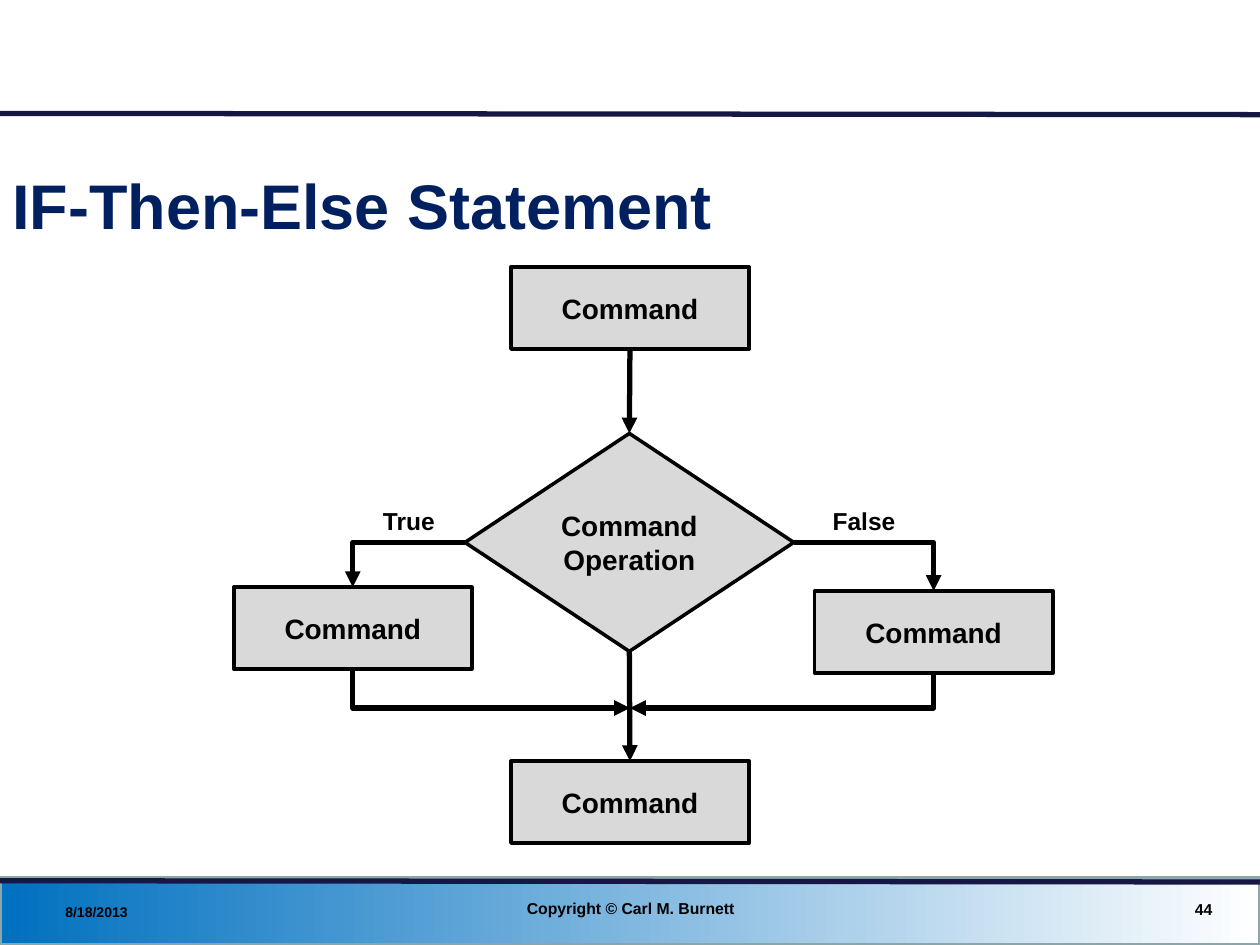
from lxml import etree
from pptx import Presentation
from pptx.dml.color import RGBColor
from pptx.enum.shapes import MSO_CONNECTOR, MSO_SHAPE
from pptx.enum.text import MSO_ANCHOR, PP_ALIGN
from pptx.oxml.ns import qn
from pptx.util import Inches, Pt

RECT = MSO_SHAPE.RECTANGLE
STEP = MSO_SHAPE.FLOWCHART_PROCESS
TEST = MSO_SHAPE.FLOWCHART_DECISION
STRAIGHT = MSO_CONNECTOR.STRAIGHT
ELBOW = MSO_CONNECTOR.ELBOW
LEFT, CENTER, RIGHT = PP_ALIGN.LEFT, PP_ALIGN.CENTER, PP_ALIGN.RIGHT
MIDDLE, TOP = MSO_ANCHOR.MIDDLE, MSO_ANCHOR.TOP

WIDE, HIGH = 10, 7.5
BOX_W, BOX_H = 1.89, 0.65
MID = WIDE / 2
JOIN = 5.62
NORTH, WEST, SOUTH, EAST = range(4)


def color(code):
    return RGBColor.from_string(code)


def place(*sizes):
    return [Inches(size) for size in sizes]


def write(shape, text, size, align, anchor=MIDDLE, code="000000", wrap=True):
    frame = shape.text_frame
    frame.word_wrap = wrap
    frame.vertical_anchor = anchor
    para = frame.paragraphs[0]
    para.text = text
    para.alignment = align
    font = para.font
    font.name, font.size, font.bold = "Arial", Pt(size), True
    font.color.rgb = color(code)


def label(slide, area, text, size, align=LEFT, **look):
    write(slide.shapes.add_textbox(*place(*area)), text, size, align, **look)


def block(slide, kind, area, text):
    shape = slide.shapes.add_shape(kind, *place(*area))
    shape.shadow.inherit = False
    shape.fill.solid()
    shape.fill.fore_color.rgb = color("D9D9D9")
    shape.line.color.rgb = color("000000")
    shape.line.width = Pt(2)
    write(shape, text, 16, CENTER)
    return shape


def step(slide, mid, top):
    return block(slide, STEP, (mid - BOX_W / 2, top, BOX_W, BOX_H), "Command")


def line(slide, kind, ends, code="000000"):
    link = slide.shapes.add_connector(kind, *place(*ends))
    link.line.color.rgb = color(code)
    link.line.width = Pt(3)
    props = link._element.spPr
    etree.SubElement(props, qn("a:effectLst"))
    if kind == ELBOW:
        props.find(qn("a:prstGeom")).set("prst", "bentConnector2")
    return link


def arrow(link, end):
    etree.SubElement(link.line._get_or_add_ln(), qn(f"a:{end}End"), type="triangle")


def flow(slide, kind, start, out, stop, into):
    link = line(slide, kind, (0, 0, 1, 1))
    link.begin_connect(start, out)
    link.end_connect(stop, into)
    arrow(link, "tail")


def merge(slide, box):
    link = line(slide, ELBOW, (MID, JOIN, 1, 1))
    link.end_connect(box, SOUTH)
    arrow(link, "head")


def frame(slide):
    band = slide.shapes.add_shape(RECT, *place(0, 6.97, WIDE, 0.53))
    band.shadow.inherit = False
    band.fill.gradient()
    band.fill.gradient_angle = 0
    for stop, code in zip(band.fill.gradient_stops, ("0070C0", "FFFFFF")):
        stop.color.rgb = color(code)
    band.line.color.rgb = color("8AA6A8")
    band.line.width = Pt(2)
    for start, stop in ((6.99, 7), (0.9, 0.91)):
        line(slide, STRAIGHT, (0, start, WIDE, stop), "171745")
    label(slide, (0.42, 7.1, 2.33, 0.27), "8/18/2013", 8)
    label(slide, (7.39, 7.07, 2.33, 0.29), "44", 9, RIGHT)
    label(slide, (3.42, 7.06, 3.17, 0.29), "Copyright © Carl M. Burnett", 9, CENTER)


def chart(slide):
    first = step(slide, MID, 2.12)
    yes = step(slide, 2.8, 4.66)
    test = block(slide, TEST, (MID - 1.31, 3.44, 2.61, 1.73), "Command\vOperation")
    last = step(slide, MID, 6.04)
    no = step(slide, 7.41, 4.69)
    flow(slide, STRAIGHT, first, SOUTH, test, NORTH)
    flow(slide, STRAIGHT, test, SOUTH, last, NORTH)
    for box, side in ((yes, WEST), (no, EAST)):
        flow(slide, ELBOW, test, side, box, NORTH)
        merge(slide, box)
    for text, left, width in (("True", 2.94, 0.62), ("False", 6.51, 0.7)):
        label(slide, (left, 3.97, width, 0.34), text, 14, anchor=TOP, wrap=False)


def main():
    deck = Presentation()
    deck.slide_width, deck.slide_height = place(WIDE, HIGH)
    slide = deck.slides.add_slide(deck.slide_layouts[6])
    frame(slide)
    label(slide, (0, 1.14, 9.58, 0.97), "IF-Then-Else Statement", 36, code="002060")
    chart(slide)
    deck.save("out.pptx")


if __name__ == "__main__":
    main()
